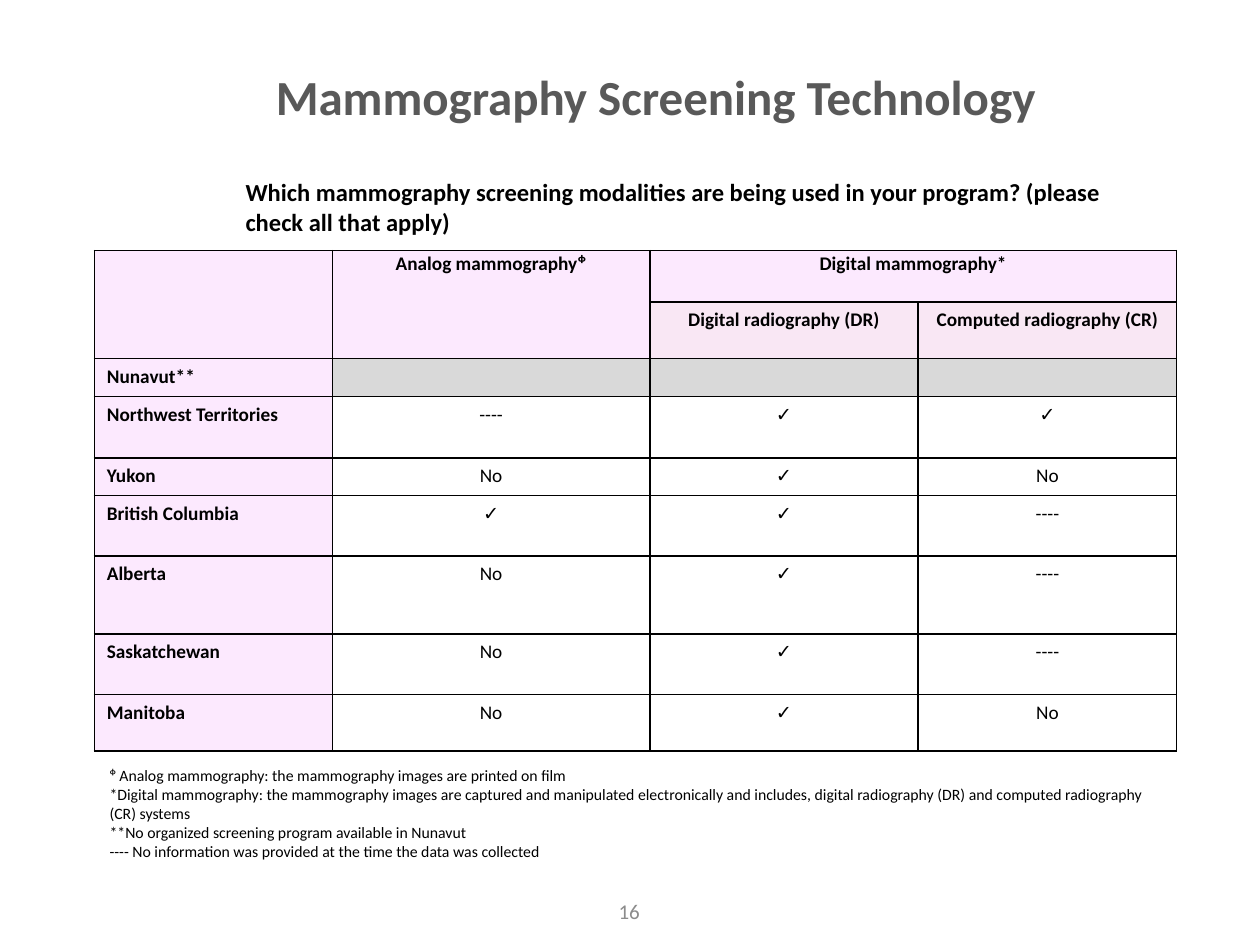
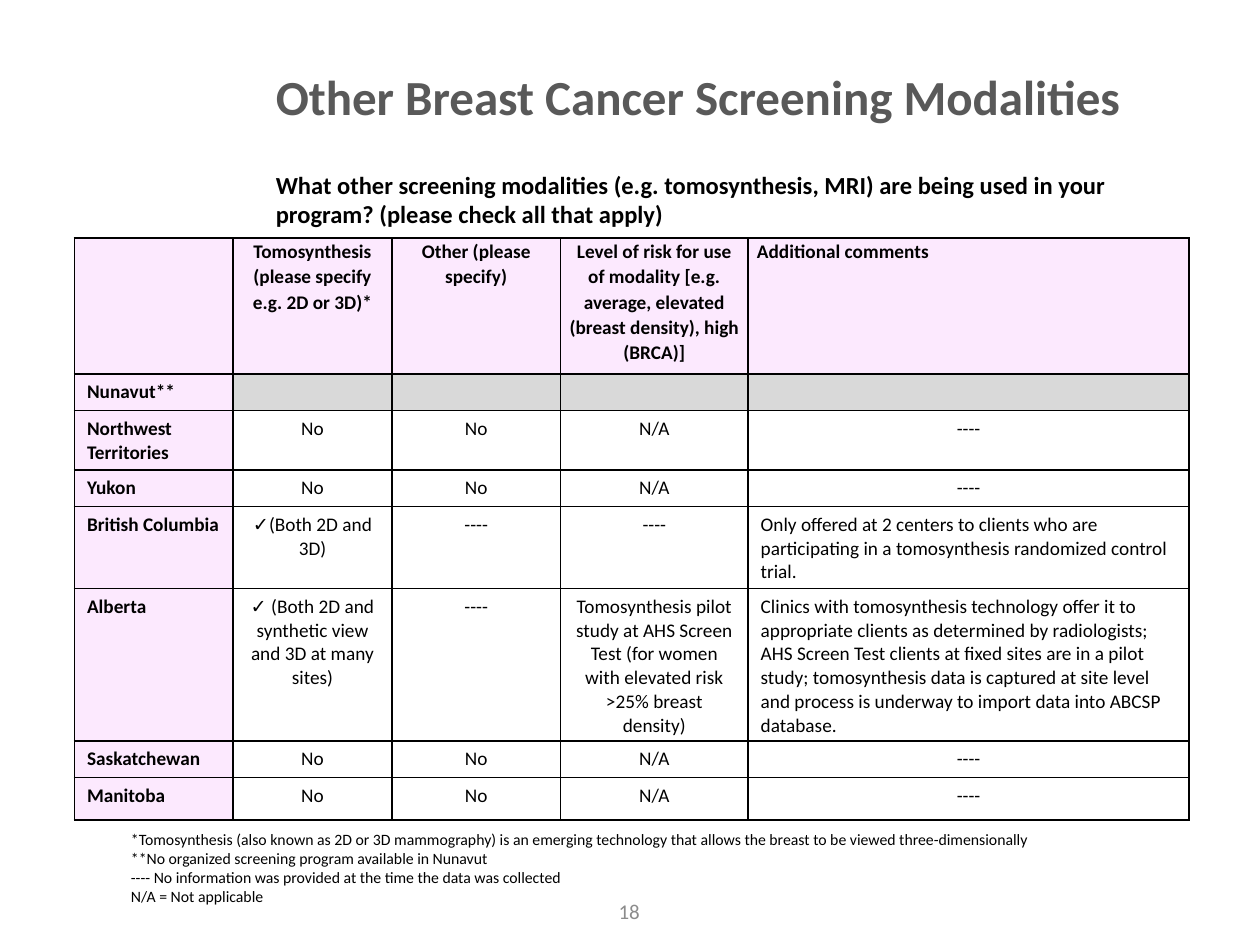
from pptx import Presentation
from pptx import util as u
from pptx.dml.color import RGBColor
from pptx.enum import shapes, text
from pptx.oxml.xmlchemy import OxmlElement

Cm = u.Cm
FONT = "Calibri"
BLACK, WHITE, TITLE_GREY, NUMBER_GREY = "000000", "FFFFFF", "595959", "8C8C8C"
PINK, ROSE, NO_PROGRAM = "FCE9FE", "F9E7F4", "D9D9D9"
LEFT, CENTER = text.PP_ALIGN.LEFT, text.PP_ALIGN.CENTER
TOP, MIDDLE = text.MSO_ANCHOR.TOP, text.MSO_ANCHOR.MIDDLE

CHECK, UNKNOWN = "✓", "----"
NO_PROGRAM_NOTE = "**No organized screening program available in Nunavut"
UNKNOWN_NOTE = "---- No information was provided at the time the data was collected"


def rgb(color):
    return RGBColor.from_string(color)


class Deck:
    """Shared style plus the slide being built."""

    def __init__(self):
        self.prs = Presentation()
        self.prs.slide_width, self.prs.slide_height = Cm(25.4), Cm(19.05)
        self.slide = None

    def new_slide(self, title, title_width):
        self.slide = self.prs.slides.add_slide(self.prs.slide_layouts[6])
        self.textbox((5.31, 0.53, title_width, 2.79), title, 28, TITLE_GREY,
                     bold=True, anchor=MIDDLE)

    def set_lines(self, frame, lines, size, color=BLACK, bold=False, align=LEFT):
        for index, line in enumerate(lines):
            paragraph = frame.add_paragraph() if index else frame.paragraphs[0]
            paragraph.text = line
            paragraph.alignment = align
            font = paragraph.font
            font.name, font.size, font.bold = FONT, u.Pt(size), bold
            font.color.rgb = rgb(color)

    def textbox(self, place, line, size, color=BLACK, bold=False,
                align=LEFT, anchor=TOP):
        frame = self.slide.shapes.add_textbox(*map(Cm, place)).text_frame
        frame.word_wrap = True
        frame.vertical_anchor = anchor
        self.set_lines(frame, [line], size, color, bold, align)

    def question(self, left, top, line):
        self.textbox((left, top, 19, 1.45), line, 14, bold=True)

    def footnotes(self, place, lines):
        panel = self.slide.shapes.add_shape(
            shapes.MSO_SHAPE.RECTANGLE, *map(Cm, place))
        panel.shadow.inherit = False
        panel.fill.solid()
        panel.fill.fore_color.rgb = rgb(WHITE)
        panel.line.fill.background()
        panel.text_frame.word_wrap = True
        panel.text_frame.vertical_anchor = TOP
        self.set_lines(panel.text_frame, lines, 9)

    def page_number(self, number):
        self.textbox((11.81, 17.83, 1.75, 1.09), str(number), 12,
                     NUMBER_GREY, align=CENTER, anchor=MIDDLE)

    def border(self, cell):
        properties = cell._tc.get_or_add_tcPr()
        for side in ("a:lnL", "a:lnR", "a:lnT", "a:lnB"):
            line = OxmlElement(side)
            line.set("w", str(u.Pt(1)))
            fill, color = OxmlElement("a:solidFill"), OxmlElement("a:srgbClr")
            color.set("val", BLACK)
            fill.append(color)
            line.append(fill)
            properties.append(line)

    def table(self, left, top, widths, heights, rows, header_rows=1,
              prose_column=None):
        table = self.slide.shapes.add_table(
            len(rows), len(widths), Cm(left), Cm(top),
            Cm(sum(widths)), Cm(sum(heights))).table
        table.first_row = table.horz_banding = False
        for column, width in zip(table.columns, widths):
            column.width = Cm(width)
        for r, (row, height) in enumerate(zip(rows, heights)):
            table.rows[r].height = Cm(height)
            for c, content in enumerate(row):
                self.cell(table.cell(r, c), r, c, content,
                          header_rows, c == prose_column)
        return table

    def cell(self, cell, r, c, content, header_rows, prose):
        is_header = r < header_rows
        self.border(cell)
        if c == 0 or r == 0:
            color = PINK
        elif is_header:
            color = ROSE
        else:
            color = WHITE if content else NO_PROGRAM
        cell.fill.solid()
        cell.fill.fore_color.rgb = rgb(color)
        paragraph = cell.text_frame.paragraphs[0]
        if not content:
            # Keeps an empty row as low as its neighbours
            end = OxmlElement("a:endParaRPr")
            end.set("sz", "1100")
            paragraph._p.append(end)
            return
        at_left = c == 0 or (prose and content != UNKNOWN)
        self.set_lines(cell.text_frame, [content], 11,
                       bold=is_header or c == 0,
                       align=LEFT if at_left else CENTER)
        if r == 0:
            cell.margin_left = cell.margin_right = Cm(0.18)
            cell.margin_top = cell.margin_bottom = 0
            paragraph.line_spacing = 1.07


def technology_slide(deck):
    deck.new_slide("Mammography Screening Technology", 17)

    # Modalities by region
    rows = [
        ("", "Analog mammographyᶲ", "Digital mammography*", ""),
        ("", "", "Digital radiography (DR)", "Computed radiography (CR)"),
        ("Nunavut**", "", "", ""),
        ("Northwest Territories", UNKNOWN, CHECK, CHECK),
        ("Yukon", "No", CHECK, "No"),
        ("British Columbia", CHECK, CHECK, UNKNOWN),
        ("Alberta", "No", CHECK, UNKNOWN),
        ("Saskatchewan", "No", CHECK, UNKNOWN),
        ("Manitoba", "No", CHECK, "No"),
    ]
    modalities = deck.table(
        1.9, 5.05, (4.8, 6.4, 5.41, 5.21),
        (1.04, 1.14, 0.76, 1.24, 0.76, 1.22, 1.57, 1.22, 1.14),
        rows, header_rows=2)
    for first, last in (((0, 0), (1, 0)), ((0, 1), (1, 1)), ((0, 2), (0, 3))):
        modalities.cell(*first).merge(modalities.cell(*last))

    # Notes and question
    deck.footnotes((1.96, 15.32, 21.8, 2.18), [
        "ᶲ Analog mammography: the mammography images are printed on film",
        "*Digital mammography: the mammography images are captured and "
        "manipulated electronically and includes, digital radiography (DR) "
        "and computed radiography (CR) systems",
        NO_PROGRAM_NOTE,
        UNKNOWN_NOTE,
    ])
    deck.question(4.7, 3.45, "Which mammography screening modalities are being "
                  "used in your program? (please check all that apply)")
    deck.page_number(16)


def other_modalities_slide(deck):
    deck.new_slide("Other Breast Cancer Screening Modalities", 19.6)

    # Other modalities by region
    none_used = ("No", "No", "N/A", UNKNOWN)
    rows = [
        ("", "Tomosynthesis (please specify e.g. 2D or 3D)*",
         "Other (please specify)",
         "Level of risk for use of modality [e.g. average, elevated "
         "(breast density), high (BRCA)]",
         "Additional comments"),
        ("Nunavut**", "", "", "", ""),
        ("Northwest Territories", *none_used),
        ("Yukon", *none_used),
        ("British Columbia", "✓(Both 2D and 3D)", UNKNOWN, UNKNOWN,
         "Only offered at 2 centers to clients who are participating in a "
         "tomosynthesis randomized control trial."),
        ("Alberta", "✓ (Both 2D and synthetic view and 3D at many sites)",
         UNKNOWN,
         "Tomosynthesis pilot study at AHS Screen Test (for women with "
         "elevated risk >25% breast density)",
         "Clinics with tomosynthesis technology offer it to appropriate "
         "clients as determined by radiologists; AHS Screen Test clients at "
         "fixed sites are in a pilot study; tomosynthesis data is captured at "
         "site level and process is underway to import data into ABCSP "
         "database."),
        ("Saskatchewan", *none_used),
        ("Manitoba", *none_used),
    ]
    deck.table(1.5, 4.8, (3.2, 3.2, 3.4, 3.78, 8.89),
               (2.74, 0.74, 1.19, 0.74, 1.14, 3.07, 0.74, 0.86),
               rows, prose_column=4)

    # Notes and question
    deck.footnotes((2.39, 16.61, 22.53, 2.18), [
        "*Tomosynthesis (also known as 2D or 3D mammography) is an emerging "
        "technology that allows the breast to be viewed three-dimensionally",
        NO_PROGRAM_NOTE,
        UNKNOWN_NOTE,
        "N/A = Not applicable",
    ])
    deck.question(5.31, 3.3, "What other screening modalities (e.g. "
                  "tomosynthesis, MRI) are being used in your program? "
                  "(please check all that apply)")
    deck.page_number(18)


def main():
    deck = Deck()
    technology_slide(deck)
    other_modalities_slide(deck)
    deck.prs.save("out.pptx")


if __name__ == "__main__":
    main()
